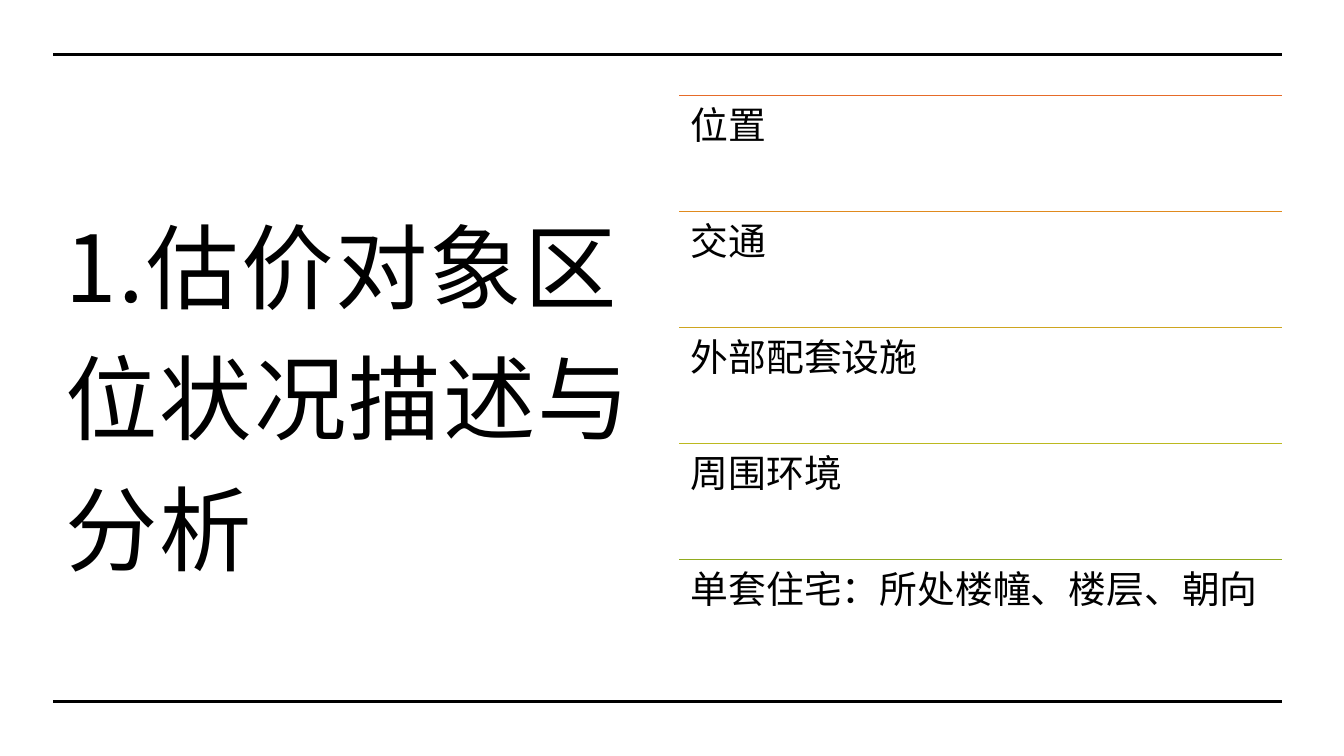
from lxml.etree import SubElement
from pptx import Presentation
from pptx.dml.color import RGBColor
from pptx.enum.shapes import MSO_CONNECTOR
from pptx.enum.text import MSO_ANCHOR
from pptx.oxml.ns import qn
from pptx.util import Pt

FONT = "Noto Sans CJK SC"
LEFT, RIGHT = 38.16, 915.84
LIST_LEFT, LIST_TOP, ROW_HEIGHT = 485.28, 68.4, 82.8

deck = Presentation()
deck.slide_width, deck.slide_height = Pt(960), Pt(540)
slide = deck.slides.add_slide(deck.slide_layouts[6])


def add_rule(left, y, color, weight):
    rule = slide.shapes.add_connector(
        MSO_CONNECTOR.STRAIGHT, Pt(left), Pt(y), Pt(RIGHT), Pt(y))
    rule.line.color.rgb = RGBColor.from_string(color)
    rule.line.width = Pt(weight)
    SubElement(rule._element.spPr, qn("a:effectLst"))


def add_text(text, left, top, width, height, size, spacing, inset):
    box = slide.shapes.add_textbox(Pt(left), Pt(top), Pt(width), Pt(height))
    frame = box.text_frame
    frame.word_wrap = True
    frame.margin_left = frame.margin_right = Pt(inset)
    frame.margin_top = frame.margin_bottom = Pt(inset)
    paragraph = frame.paragraphs[0]
    paragraph.line_spacing = spacing
    run = paragraph.add_run()
    run.text = text
    run.font.size = Pt(size)
    run.font.color.rgb = RGBColor.from_string("000000")
    run.font.name = FONT
    SubElement(run.font._element, qn("a:ea"), typeface=FONT)
    return frame, run


heading, heading_run = add_text(
    "1.估价对象区位状况描述与分析", LEFT, LIST_TOP, 442, 5 * ROW_HEIGHT, 66, 1.18, 8.64)
heading.vertical_anchor = MSO_ANCHOR.MIDDLE
heading.margin_bottom = Pt(7.2)
heading_run.font._element.set("spc", "150")

for border_y in (38.88, 501.12):
    add_rule(LEFT, border_y, "000000", 2.25)

factors = [
    ("位置", "E66B29"),
    ("交通", "E08A1E"),
    ("外部配套设施", "CEA51F"),
    ("周围环境", "BCB91F"),
    ("单套住宅：所处楼幢、楼层、朝向", "91AB1F"),
]
for row, (factor, color) in enumerate(factors):
    top = LIST_TOP + row * ROW_HEIGHT
    add_rule(LIST_LEFT, top, color, 1)
    add_text(factor, LIST_LEFT, top, RIGHT - LIST_LEFT, ROW_HEIGHT, 27, 0.9, 8.1)

deck.save("out.pptx")
